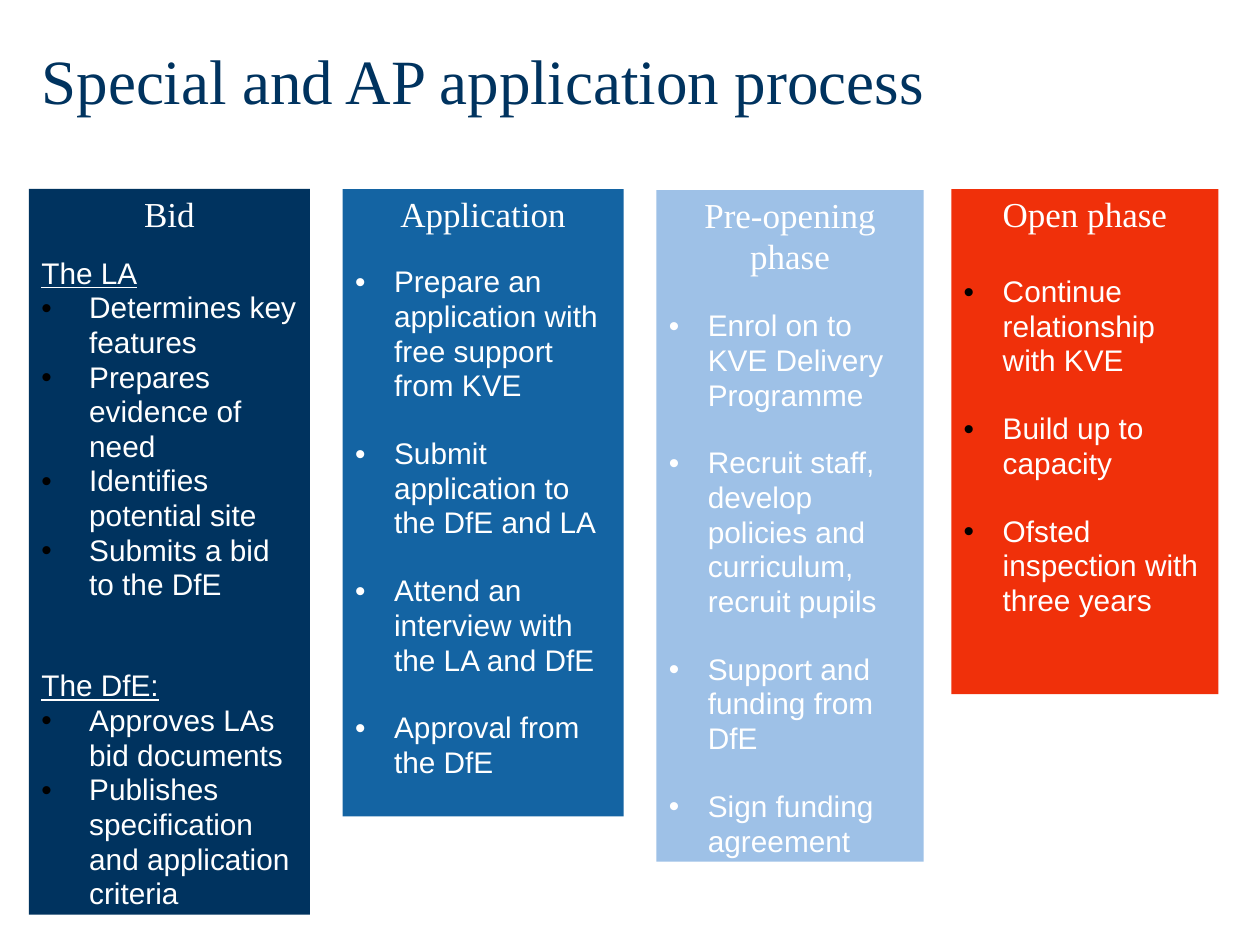
from dataclasses import dataclass

from lxml.etree import SubElement
from pptx import Presentation
from pptx.dml.color import RGBColor
from pptx.enum.shapes import MSO_SHAPE
from pptx.enum.text import MSO_ANCHOR, MSO_AUTO_SIZE, PP_ALIGN
from pptx.oxml.ns import qn
from pptx.util import Inches, Pt

NAVY = RGBColor(0x00, 0x33, 0x5F)
BLUE = RGBColor(0x14, 0x64, 0xA3)
PALE_BLUE = RGBColor(0x9E, 0xC1, 0xE7)
RED = RGBColor(0xF0, 0x30, 0x0A)
WHITE = RGBColor(0xFF, 0xFF, 0xFF)
BLACK = RGBColor(0x00, 0x00, 0x00)


@dataclass
class Column:
    """One phase of the process, its box and its bullet layout."""
    heading: str
    left: float
    top: float
    width: float
    height: float
    fill: RGBColor
    bullet_color: RGBColor
    heading_gap: float
    item_gap: float
    indent: float
    groups: list


class ProcessSlide:
    """Draws the elements of one slide in a shared style."""
    heading_font = "Times New Roman"
    body_font = "Arial"
    line_spacing = 0.97

    def __init__(self, presentation):
        self.slide = presentation.slides.add_slide(presentation.slide_layouts[5])

    def add_run(self, paragraph, text, font_name, size, color, underline=None):
        run = paragraph.add_run()
        run.text = text
        run.font.name = font_name
        run.font.size = Pt(size)
        run.font.color.rgb = color
        run.font.underline = underline

    def add_title(self, text):
        title = self.slide.shapes.title
        title.left, title.top = Inches(0.23), Inches(0.28)
        title.width, title.height = Inches(9.45), Inches(0.9)
        frame = title.text_frame
        frame.vertical_anchor = MSO_ANCHOR.TOP
        frame.auto_size = MSO_AUTO_SIZE.NONE
        paragraph = frame.paragraphs[0]
        paragraph.alignment = PP_ALIGN.LEFT
        paragraph.line_spacing = 1.0
        self.add_run(paragraph, text, self.heading_font, 36, NAVY)

    def add_bullet(self, paragraph, indent, color):
        properties = paragraph._p.get_or_add_pPr()
        properties.set("marL", str(Inches(indent)))
        properties.set("indent", str(-Inches(indent)))
        bullet_color = SubElement(properties, qn("a:buClr"))
        SubElement(bullet_color, qn("a:srgbClr"), val=str(color))
        SubElement(properties, qn("a:buFont"), typeface=self.body_font)
        SubElement(properties, qn("a:buChar"), char="•")

    def add_body_line(self, frame, text, space_before, underline=None):
        paragraph = frame.add_paragraph()
        paragraph.alignment = PP_ALIGN.LEFT
        paragraph.line_spacing = self.line_spacing
        paragraph.space_before = Pt(space_before)
        self.add_run(paragraph, text, self.body_font, 17, WHITE, underline)
        return paragraph

    def add_column(self, column):
        shape = self.slide.shapes.add_shape(
            MSO_SHAPE.RECTANGLE, Inches(column.left), Inches(column.top),
            Inches(column.width), Inches(column.height))
        shape.shadow.inherit = False
        shape.fill.solid()
        shape.fill.fore_color.rgb = column.fill
        shape.line.fill.background()
        frame = shape.text_frame
        frame.word_wrap = True
        frame.vertical_anchor = MSO_ANCHOR.TOP
        heading = frame.paragraphs[0]
        heading.alignment = PP_ALIGN.CENTER
        heading.line_spacing = self.line_spacing
        self.add_run(heading, column.heading, self.heading_font, 20, WHITE)
        gap = column.heading_gap
        for label, items in column.groups:
            if label:
                self.add_body_line(frame, label, gap, underline=True)
                gap = column.item_gap
            for item in items:
                paragraph = self.add_body_line(frame, item, gap)
                self.add_bullet(paragraph, column.indent, column.bullet_color)
                gap = column.item_gap
            gap = 38


COLUMNS = [
    Column("Bid", 0.23, 1.5, 2.23, 5.76, NAVY, BLACK, 11.7, 0, 0.38, [
        ("The LA", ["Determines key features", "Prepares evidence of need",
                    "Identifies potential site", "Submits a bid to the DfE"]),
        ("The DfE:", ["Approves LAs bid documents",
                      "Publishes specification and application criteria"]),
    ]),
    Column("Application", 2.72, 1.5, 2.23, 4.98, BLUE, WHITE, 16.7, 19, 0.31, [
        (None, ["Prepare an application with free support from KVE",
                "Submit application to the DfE and LA",
                "Attend an interview with the LA and DfE",
                "Approval from the DfE"]),
    ]),
    Column("Pre-opening phase", 5.21, 1.51, 2.12, 5.33, PALE_BLUE, WHITE, 17.8, 19, 0.31, [
        (None, ["Enrol on to KVE Delivery Programme",
                "Recruit staff, develop policies and curriculum, recruit pupils",
                "Support and funding from DfE",
                "Sign funding agreement"]),
    ]),
    Column("Open phase", 7.55, 1.5, 2.12, 4.01, RED, BLACK, 22.3, 19, 0.31, [
        (None, ["Continue relationship with KVE", "Build up to capacity",
                "Ofsted inspection with three years"]),
    ]),
]


def main():
    presentation = Presentation()
    presentation.slide_width, presentation.slide_height = Inches(10), Inches(7.5)
    process = ProcessSlide(presentation)
    process.add_title("Special and AP application process")
    for column in COLUMNS:
        process.add_column(column)
    presentation.save("out.pptx")


if __name__ == "__main__":
    main()
